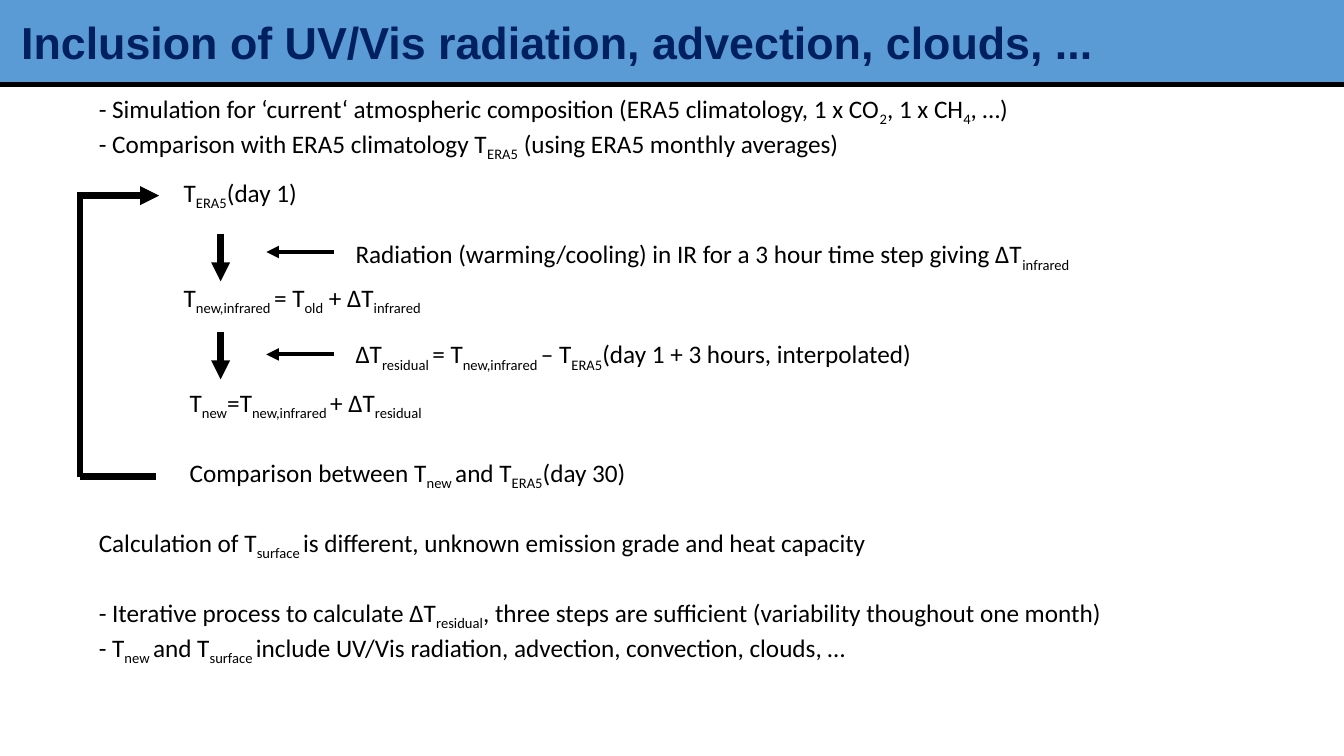
import pptx
import pptx.util
import pptx.dml.color
import pptx.enum.shapes
import pptx.enum.text
import pptx.oxml
import pptx.oxml.ns

Cm = pptx.util.Cm
Pt = pptx.util.Pt
COLORS = {"ink": "000000", "band": "5B9BD5", "title": "002060"}
STEP_INDENT = 2.14
RESULT_INDENT = 2.29
BODY_LINES = [
    ("- Simulation for ‘current‘ atmospheric composition (ERA5 climatology, 1 x CO|2|, 1 x CH|4|, …)", 0, 0),
    ("- Comparison with ERA5 climatology T|ERA5| (using ERA5 monthly averages)", 0, 0),
    ("T|ERA5|(day 1)", 10, STEP_INDENT),
    ("T|new,infrared |= T|old| + ΔT|infrared", 50, STEP_INDENT),
    ("T|new|=T|new,infrared |+ ΔT|residual", 50, RESULT_INDENT),
    ("Comparison between T|new |and T|ERA5|(day 30)", 25, RESULT_INDENT),
    ("Calculation of T|surface |is different, unknown emission grade and heat capacity", 25, 0),
    ("- Iterative process to calculate ΔT|residual|, three steps are sufficient (variability thoughout one month)", 25, 0),
    ("- T|new |and T|surface |include UV/Vis radiation, advection, convection, clouds, …", 0, 0),
]
NOTES = [
    ("Radiation (warming/cooling) in IR for a 3 hour time step giving ΔT|infrared", 5.89, 18.77, 0.46),
    ("ΔT|residual |= T|new,infrared |– T|ERA5|(day 1 + 3 hours, interpolated)", 8.41, 15.42, 0.52),
]


def color(name):
    return pptx.dml.color.RGBColor.from_string(COLORS[name])


def write(para, text, font="Calibri", size=18, ink="ink", bold=False, before=0, spacing=None, indent=0):
    para.alignment = pptx.enum.text.PP_ALIGN.LEFT
    para.space_before = Pt(before)
    if spacing:
        para.line_spacing = Pt(spacing)
    if indent:
        properties = para._p.get_or_add_pPr()
        properties.set("marL", str(Cm(indent)))
        properties.set("indent", "0")
    for position, part in enumerate(text.split("|")):
        if not part:
            continue
        span = para.add_run()
        span.text = part
        span.font.name = font
        span.font.size = Pt(size)
        span.font.bold = bold
        span.font.color.rgb = color(ink)
        if position % 2:
            span.font._element.set("baseline", "-25000")


def add_text_box(slide, left, top, width, height):
    box = slide.shapes.add_textbox(Cm(left), Cm(top), Cm(width), Cm(height))
    box.text_frame.word_wrap = True
    return box.text_frame


def add_line(slide, start, end, width, arrow=False):
    line = slide.shapes.add_connector(
        pptx.enum.shapes.MSO_CONNECTOR.STRAIGHT, *(Cm(value) for value in start + end))
    line.line.color.rgb = color("ink")
    line.line.width = Pt(width)
    if arrow:
        tail = pptx.oxml.parse_xml(f'<a:tailEnd {pptx.oxml.ns.nsdecls("a")} type="triangle"/>')
        line.line._get_or_add_ln().append(tail)
    line._element.spPr.append(pptx.oxml.parse_xml(f'<a:effectLst {pptx.oxml.ns.nsdecls("a")}/>'))


def add_header(slide, text, width, height):
    band = slide.shapes.add_shape(
        pptx.enum.shapes.MSO_SHAPE.RECTANGLE, 0, 0, Cm(width), Cm(height))
    band.shadow.inherit = False
    band.fill.solid()
    band.fill.fore_color.rgb = color("band")
    band.line.color.rgb = color("band")
    add_line(slide, (0, height + 0.02), (width, height + 0.02), 3)
    title = slide.shapes.title
    title.left, title.top = Cm(0.28), Cm(0.23)
    title.width, title.height = Cm(27.74), Cm(height - 0.48)
    frame = title.text_frame
    frame.word_wrap = True
    frame.vertical_anchor = pptx.enum.text.MSO_ANCHOR.MIDDLE
    write(frame.paragraphs[0], text, font="Arial", size=32, ink="title", bold=True)
    slide.shapes._spTree.append(title._element)


def add_body(slide, left, top, width, height):
    frame = add_text_box(slide, left, top, width, height)
    for number, (text, before, indent) in enumerate(BODY_LINES):
        para = frame.add_paragraph() if number else frame.paragraphs[0]
        write(para, text, before=before, spacing=25, indent=indent)


def add_note(slide, text, left, top, width, arrow_drop):
    frame = add_text_box(slide, left, top, width, 1.02)
    write(frame.paragraphs[0], text)
    arrow_y = top + arrow_drop
    add_line(slide, (left - 0.3, arrow_y), (left - 2, arrow_y), 3, arrow=True)


def add_step_arrow(slide, left, top):
    add_line(slide, (left, top), (left, top + 1.2), 4.5, arrow=True)


def add_loop(slide, left, top, width, height):
    bottom = top + height
    add_line(slide, (left, top), (left, bottom), 4.5)
    add_line(slide, (left + 0.07, top + 0.08), (left + width + 0.07, top + 0.08), 4.5, arrow=True)
    add_line(slide, (left, bottom), (left + width, bottom), 4.5)


def main():
    deck = pptx.Presentation()
    deck.slide_width, deck.slide_height = Cm(33.87), Cm(19.05)
    slide = deck.slides.add_slide(deck.slide_layouts.get_by_name("Title Only"))
    add_body(slide, 2.24, 2.21, 26.24, 14.86)
    for top in (5.89, 8.36):
        add_step_arrow(slide, 5.56, top)
    for text, top, width, arrow_drop in NOTES:
        add_note(slide, text, 8.71, top, width, arrow_drop)
    add_loop(slide, 2.01, 4.85, 1.93, 7.16)
    add_header(slide, "Inclusion of UV/Vis radiation, advection, clouds, ...", 33.87, 2.11)
    deck.save("out.pptx")


if __name__ == "__main__":
    main()
